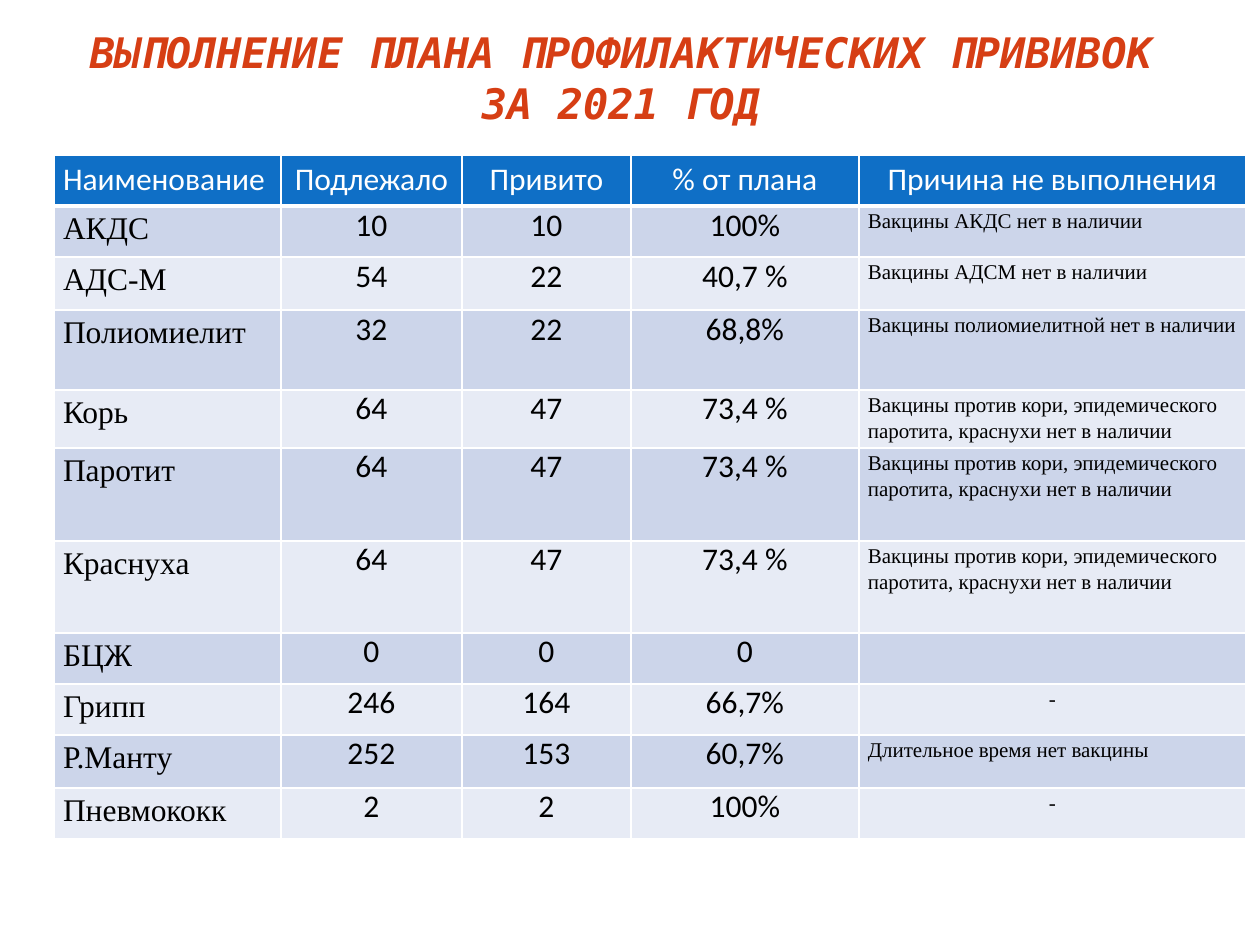
from pptx import Presentation
from pptx.dml.color import RGBColor
from pptx.enum.text import MSO_ANCHOR, PP_ALIGN
from pptx.oxml import parse_xml
from pptx.oxml.ns import nsdecls
from pptx.util import Pt

PX = 914400 // 126
ORANGE = RGBColor(0xD6, 0x3E, 0x14)
BLUE = RGBColor(0x0F, 0x6F, 0xC6)
DARK_BAND = RGBColor(0xCC, 0xD5, 0xEA)
LIGHT_BAND = RGBColor(0xE7, 0xEB, 0xF5)
WHITE = RGBColor(0xFF, 0xFF, 0xFF)
BLACK = RGBColor(0x00, 0x00, 0x00)

COMBINED_REASON = "Вакцины против кори, эпидемического паротита, краснухи нет в наличии"
ROWS = [
    ("Наименование", "Подлежало", "Привито", "% от плана", "Причина не выполнения"),
    ("АКДС", "10", "10", "100%", "Вакцины АКДС нет в наличии"),
    ("АДС-М", "54", "22", "40,7 %", "Вакцины АДСМ нет в наличии"),
    ("Полиомиелит", "32", "22", "68,8%", "Вакцины полиомиелитной нет в наличии"),
    ("Корь", "64", "47", "73,4 %", COMBINED_REASON),
    ("Паротит", "64", "47", "73,4 %", COMBINED_REASON),
    ("Краснуха", "64", "47", "73,4 %", COMBINED_REASON),
    ("БЦЖ", "0", "0", "0", ""),
    ("Грипп", "246", "164", "66,7%", "-"),
    ("Р.Манту", "252", "153", "60,7%", "Длительное время нет вакцины"),
    ("Пневмококк", "2", "2", "100%", "-"),
]
COLUMN_WIDTHS = [227, 181, 169, 228, 387]
ROW_HEIGHTS = [51, 51, 53, 80, 56, 93, 92, 51, 51, 53, 51]
NAME_COLUMN, REASON_COLUMN = 0, 4


def add_border(cell, side, points):
    """Draw one white edge of a cell; side is L, R, T or B."""
    cell._tc.get_or_add_tcPr().append(parse_xml(
        f'<a:ln{side} {nsdecls("a")} w="{Pt(points)}"><a:solidFill>'
        f'<a:srgbClr val="{WHITE}"/></a:solidFill></a:ln{side}>'))


presentation = Presentation()
presentation.slide_width = 1260 * PX
presentation.slide_height = 945 * PX
slide = presentation.slides.add_slide(presentation.slide_layouts[6])

title = slide.shapes.add_textbox(54 * PX, 22 * PX, 1134 * PX, 110 * PX)
title_frame = title.text_frame
title_frame.word_wrap = True
title_frame.vertical_anchor = MSO_ANCHOR.MIDDLE
paragraph = title_frame.paragraphs[0]
paragraph.text = "ВЫПОЛНЕНИЕ ПЛАНА ПРОФИЛАКТИЧЕСКИХ ПРИВИВОК ЗА 2021 ГОД"
paragraph.alignment = PP_ALIGN.CENTER
paragraph.font.name = "DejaVu Sans Mono"
paragraph.font.size = Pt(24)
paragraph.font.bold = True
paragraph.font.italic = True
paragraph.font.color.rgb = ORANGE

table = slide.shapes.add_table(
    len(ROWS), len(COLUMN_WIDTHS), 54 * PX, 155 * PX,
    sum(COLUMN_WIDTHS) * PX, sum(ROW_HEIGHTS) * PX).table
for column, width in zip(table.columns, COLUMN_WIDTHS):
    column.width = width * PX
for row, height in zip(table.rows, ROW_HEIGHTS):
    row.height = height * PX

for row_index, values in enumerate(ROWS):
    is_header = row_index == 0
    band = BLUE if is_header else DARK_BAND if row_index % 2 else LIGHT_BAND
    for column_index, value in enumerate(values):
        is_name = column_index == NAME_COLUMN
        is_reason = column_index == REASON_COLUMN
        cell = table.cell(row_index, column_index)
        cell.margin_left = cell.margin_right = 9 * PX
        cell.margin_top = cell.margin_bottom = 0
        add_border(cell, "L", 1)
        add_border(cell, "R", 1)
        add_border(cell, "T", 3 if row_index == 1 else 1)
        add_border(cell, "B", 3 if is_header else 1)
        cell.fill.solid()
        cell.fill.fore_color.rgb = band

        paragraph = cell.text_frame.paragraphs[0]
        paragraph.text = value
        left_aligned = is_name or (is_reason and not is_header and value != "-")
        paragraph.alignment = PP_ALIGN.LEFT if left_aligned else PP_ALIGN.CENTER
        if is_header or is_name or is_reason:
            paragraph.line_spacing = 1.15
        serif = not is_header and (is_name or is_reason)
        paragraph.font.name = "Times New Roman" if serif else "Calibri"
        paragraph.font.size = Pt(12 if is_reason and not is_header else 18)
        paragraph.font.bold = False
        paragraph.font.color.rgb = WHITE if is_header else BLACK

presentation.save("out.pptx")
